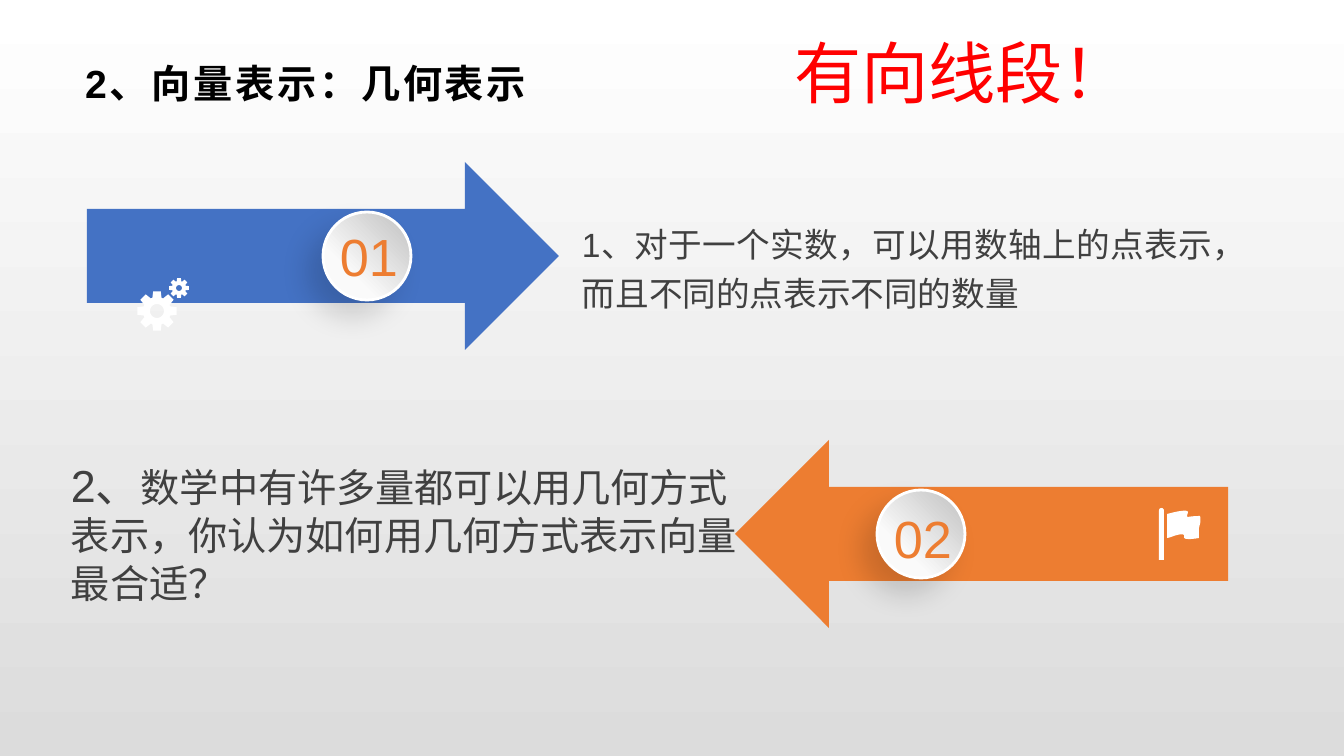
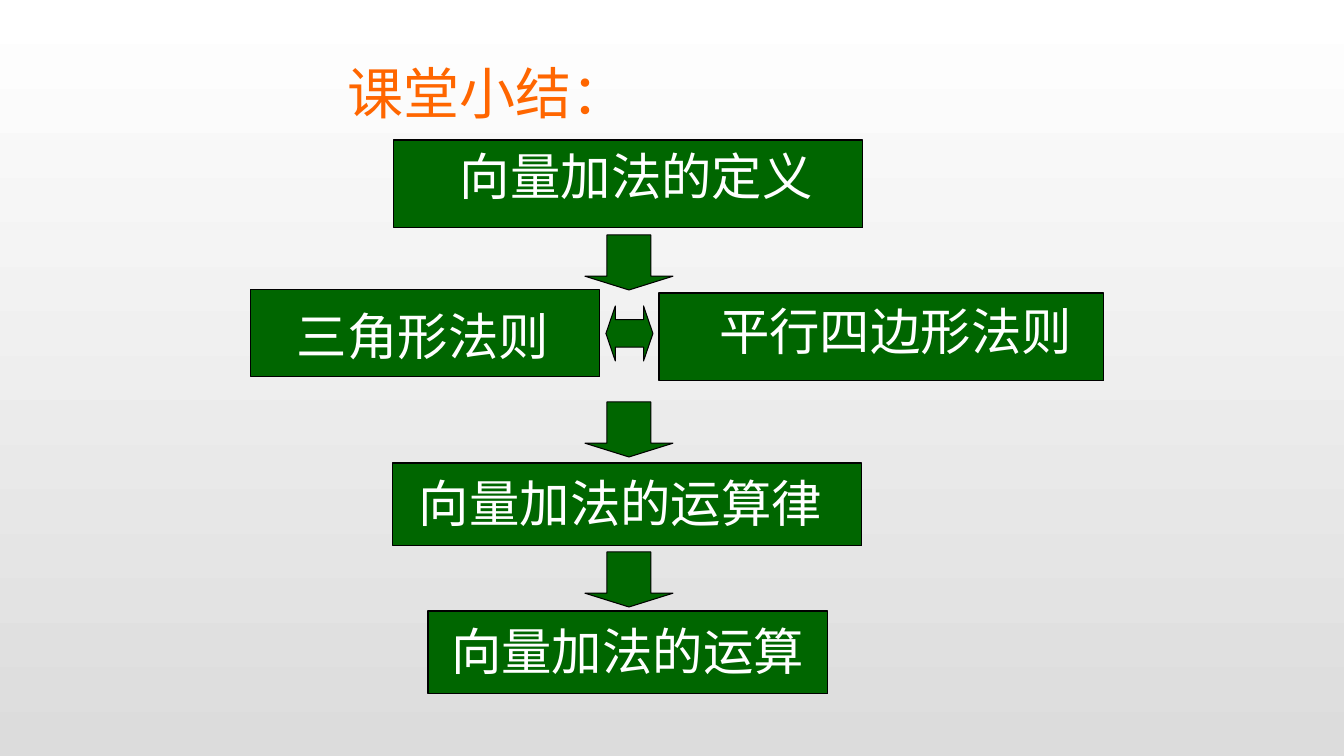
import math
from dataclasses import dataclass

from lxml import etree
from pptx import Presentation
from pptx import util as u
from pptx.dml.color import RGBColor
from pptx.enum import shapes, text
from pptx.oxml import ns

W, H = 1344, 756
SCALE = u.Inches(1) / 100.8
SHAPE = shapes.MSO_SHAPE
ALIGN = text.PP_ALIGN
ANCHOR = text.MSO_ANCHOR


@dataclass(frozen=True)
class Theme:
    latin: str = "Arial"
    east: str = "Noto Sans CJK SC"
    bg_top: str = "FFFFFF"
    bg_bottom: str = "DCDCDC"
    black: str = "000000"
    white: str = "FFFFFF"
    body: str = "404040"
    blue: str = "4472C4"
    orange: str = "ED7D31"
    red: str = "FF0000"
    heading: str = "FF6600"
    green: str = "006600"
    badge_dark: str = "BFBFBF"
    badge_light: str = "FAFAFA"
    title_pt: float = 28
    note_pt: float = 24
    question_pt: float = 28
    index_pt: float = 32
    callout_pt: float = 48
    badge_pt: float = 37.3
    summary_pt: float = 40
    node_pt: float = 36


T = Theme()


def px(v):
    return u.Emu(round(v * SCALE))


def rgb(c):
    return RGBColor.from_string(c)


def gradient(fill, start, end, angle, end_pos=1):
    fill.gradient()
    fill.gradient_angle = angle
    for stop, color, pos in zip(fill.gradient_stops, (start, end), (0, end_pos)):
        stop.color.rgb = rgb(color)
        stop.position = pos


def new_slide(prs):
    s = prs.slides.add_slide(prs.slide_layouts[6])
    gradient(s.background.fill, T.bg_top, T.bg_bottom, 270)
    return s


def add_run(p, words, size, color, bold=False, spacing=0, font=T.latin):
    r = p.add_run()
    r.text = words
    r.font.size = u.Pt(size)
    r.font.name = font
    r.font.bold = bold
    r.font.color.rgb = rgb(color)
    rpr = r.font._element
    if spacing:
        rpr.set("spc", str(spacing * 100))
    east = etree.Element(ns.qn("a:ea"), typeface=T.east)
    rpr.find(ns.qn("a:latin")).addnext(east)


def set_margins(tf, left=0, top=0, right=0, bottom=0):
    tf.margin_left, tf.margin_top = px(left), px(top)
    tf.margin_right, tf.margin_bottom = px(right), px(bottom)


def text_box(s, box, anchor=ANCHOR.TOP, wrap=True):
    tf = s.shapes.add_textbox(*map(px, box)).text_frame
    tf.word_wrap = wrap
    tf.vertical_anchor = anchor
    set_margins(tf, 10, 5, 10, 5)
    return tf.paragraphs[0]


def paint(sp, fill, line=None, width=0.75):
    sp.shadow.inherit = False
    if fill:
        sp.fill.solid()
        sp.fill.fore_color.rgb = rgb(fill)
    if line:
        sp.line.color.rgb = rgb(line)
        sp.line.width = u.Pt(width)
    else:
        sp.line.fill.background()


def add_shape(s, kind, box, fill, line=None, width=0.75, adj=()):
    sp = s.shapes.add_shape(kind, *map(px, box))
    for i, v in enumerate(adj):
        sp.adjustments[i] = v
    paint(sp, fill, line, width)
    return sp


def outline(s, contours, fill):
    first, *holes = [[(px(x), px(y)) for x, y in c] for c in contours]
    fb = s.shapes.build_freeform(*first[0], scale=1.0)
    fb.add_line_segments(first[1:], close=True)
    for hole in holes:
        fb.move_to(*hole[0])
        fb.add_line_segments(hole[1:], close=True)
    paint(fb.convert_to_shape(), fill)


def gear(s, cx, cy, radius, hole, teeth=8):
    def polar(r, deg):
        a = math.radians(deg)
        return cx + r * math.cos(a), cy + r * math.sin(a)

    profile = ((0.7, -19), (1, -11), (1, 11), (0.7, 19))
    rim = [polar(radius * k, i * 360 / teeth + d)
           for i in range(teeth) for k, d in profile]
    outline(s, [rim, [polar(hole, -d) for d in range(0, 360, 15)]], T.white)


def bezier(p0, p1, p2, p3, steps=8):
    for i in range(1, steps + 1):
        t = i / steps
        weights = ((1 - t) ** 3, 3 * t * (1 - t) ** 2, 3 * t * t * (1 - t), t ** 3)
        yield tuple(sum(w * p[k] for w, p in zip(weights, (p0, p1, p2, p3)))
                    for k in (0, 1))


def flag(s, x, y):
    add_shape(s, SHAPE.ROUND_2_SAME_RECTANGLE, (x, y, 5, 52), T.white, adj=(0.5, 0))
    curves = (
        ((41, 8), (33, 8), (29, 9)),
        ((27, 9), (29, 5), (29, 4)),
        ((29, 0), (8, 6), (8, 6)),
        ((8, 6), (8, 30), (8, 30)),
        ((8, 30), (9, 30), (12, 29)),
        ((17, 27), (27, 24), (25, 29)),
        ((24, 33), (40, 30), (40, 30)),
        ((40, 30), (39, 21), (41, 16)),
        ((42, 11), (41, 8), (41, 8)),
    )
    pts = [(41, 8)]
    for curve in curves:
        pts += bezier(pts[-1], *curve)
    outline(s, [[(x + dx, y + dy) for dx, dy in pts]], T.white)


def badge(s, x, y, label, drop=0, size=88):
    sp = add_shape(s, SHAPE.OVAL, (x, y, size, size), None, T.white, 2)
    gradient(sp.fill, T.badge_dark, T.badge_light, 225, 0.7)
    effects = sp._element.spPr.find(ns.qn("a:effectLst"))
    shadow = etree.SubElement(
        effects, ns.qn("a:outerShdw"), blurRad=str(u.Pt(20)), dist=str(u.Pt(15)),
        dir=str(135 * 60000), algn="ctr", rotWithShape="0")
    color = etree.SubElement(shadow, ns.qn("a:srgbClr"), val=T.black)
    etree.SubElement(color, ns.qn("a:alpha"), val="15000")
    p = text_box(s, (x + 2, y + drop, size, size), ANCHOR.MIDDLE, wrap=False)
    p.alignment = ALIGN.CENTER
    add_run(p, label, T.badge_pt, T.orange)


def arrow_banner(s, kind, box, color, label, badge_dx, drop=0):
    x, y, _, h = box
    add_shape(s, kind, box, color)
    badge(s, x + badge_dx, y + (h - 88) // 2, label, drop)


def representation_slide(prs):
    s = new_slide(prs)
    p = text_box(s, (75, 47, 1196, 72), ANCHOR.MIDDLE)
    add_run(p, "2、向量表示：几何表示", T.title_pt, T.black, bold=True, spacing=2)

    p = text_box(s, (572, 211, 684, 104))
    p.alignment = ALIGN.JUSTIFY
    p.line_spacing = 1.2
    add_run(p, "1、对于一个实数，可以用数轴上的点表示，而且不同的点表示不同的数量",
            T.note_pt, T.body)

    p = text_box(s, (61, 453, 689, 159))
    add_run(p, "2、", T.index_pt, T.body)
    add_run(p, "数学中有许多量都可以用几何方式表示，你认为如何用几何方式表示向量最合适？",
            T.question_pt, T.body)

    arrow_banner(s, SHAPE.RIGHT_ARROW, (87, 162, 472, 188), T.blue, "01", 236)
    gear(s, 179, 288, 10, 3)
    gear(s, 157, 311, 20, 7)
    arrow_banner(s, SHAPE.LEFT_ARROW, (735, 440, 493, 188), T.orange, "02", 142, 4)
    flag(s, 1159, 508)

    p = text_box(s, (784, 26, 395, 92))
    add_run(p, "有向线段！", T.callout_pt, T.red)


def node(s, box, words, left, top):
    sp = add_shape(s, SHAPE.RECTANGLE, box, T.green, T.black)
    tf = sp.text_frame
    tf.word_wrap = True
    tf.vertical_anchor = ANCHOR.TOP
    set_margins(tf, left, top)
    p = tf.paragraphs[0]
    p.alignment = ALIGN.LEFT
    add_run(p, words, T.node_pt, T.white)


def summary_slide(prs):
    s = new_slide(prs)
    p = text_box(s, (338, 53, 309, 78))
    add_run(p, "课堂小结：", T.summary_pt, T.heading, font=T.east)

    nodes = (
        ((394, 140, 469, 88), "向量加法的定义", 66, 5),
        ((251, 290, 349, 87), "三角形法则", 46, 15),
        ((659, 293, 445, 88), "平行四边形法则", 60, 7),
        ((393, 463, 469, 83), "向量加法的运算律", 26, 9),
        ((428, 611, 400, 83), "向量加法的运算", 23, 9),
    )
    for spec_box, words, left, top in nodes:
        node(s, spec_box, words, left, top)
    for y in (235, 402, 552):
        add_shape(s, SHAPE.DOWN_ARROW, (585, y, 88, 55), T.green, T.black,
                  adj=(0.5, 0.25))
    add_shape(s, SHAPE.LEFT_RIGHT_ARROW, (606, 306, 47, 55), T.green, T.black,
              adj=(0.5, 0.2))


def main():
    prs = Presentation()
    prs.slide_width, prs.slide_height = px(W), px(H)
    representation_slide(prs)
    summary_slide(prs)
    prs.save("out.pptx")


if __name__ == "__main__":
    main()
